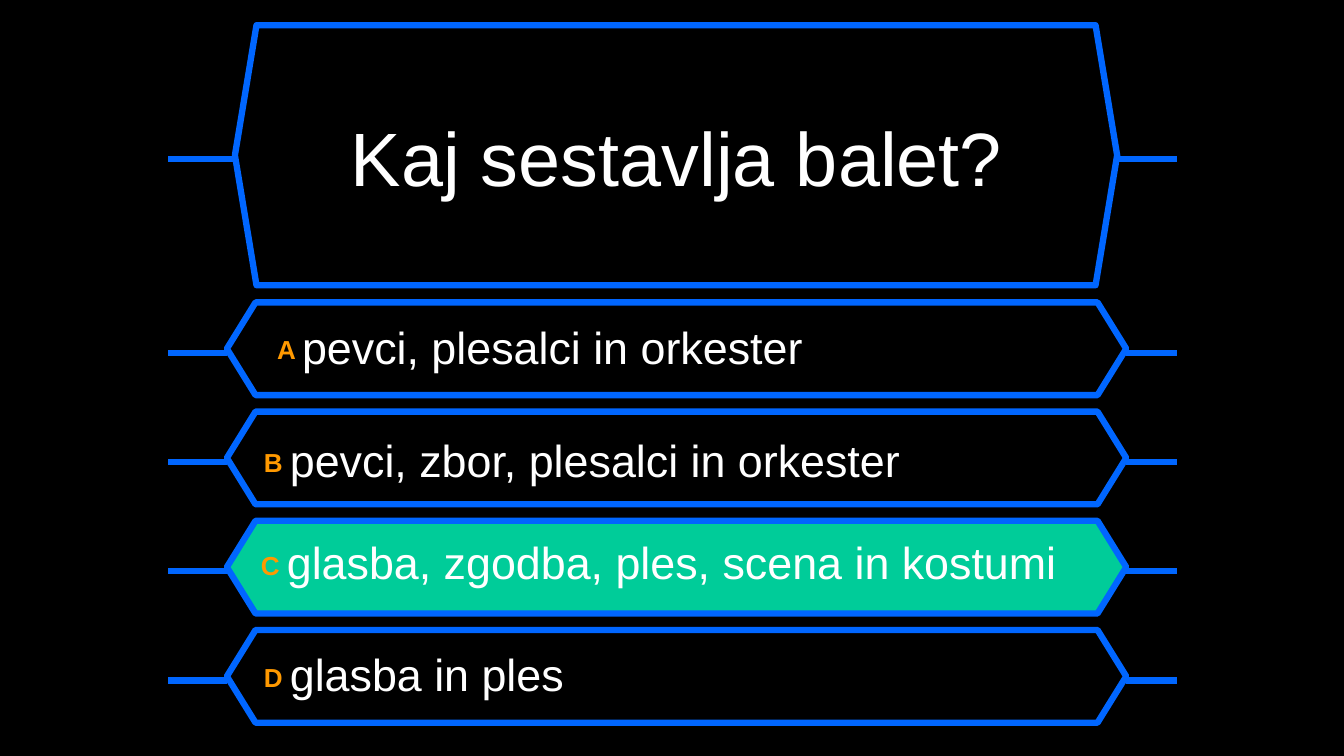
"""Build a quiz slide with one question and four answer bars."""
from dataclasses import dataclass

from lxml.etree import SubElement
from pptx import Presentation
from pptx.dml.color import RGBColor
from pptx.enum.shapes import MSO_CONNECTOR as Connector, MSO_SHAPE as Shape
from pptx.enum.text import MSO_ANCHOR as Anchor, PP_ALIGN as Align
from pptx.oxml.ns import qn
from pptx.slide import Slide
from pptx.text.text import TextFrame, _Paragraph as Paragraph
from pptx.util import Inches, Pt

BLACK = RGBColor(0x00, 0x00, 0x00)
WHITE = RGBColor(0xFF, 0xFF, 0xFF)
BLUE = RGBColor(0x00, 0x66, 0xFF)
GREEN = RGBColor(0x00, 0xCC, 0x99)
ORANGE = RGBColor(0xFF, 0x99, 0x00)
FONT = "Arial"
LINE_WIDTH = Pt(4.5)
WIRE_LEFT, WIRE_RIGHT = 1.67, 11.67
WIRE_DROP = 0.04
ANSWER_TOP, ANSWER_PITCH = 3.0, 13 / 12


@dataclass(frozen=True)
class Box:
    left: float
    top: float
    width: float
    height: float


@dataclass(frozen=True)
class Answer:
    letter: str
    text: str
    text_box: Box
    fill: RGBColor = BLACK


ANSWERS = [
    Answer("A", "pevci, plesalci in orkester", Box(2.65, 3.12, 7.95, 0.67)),
    Answer("B", "pevci, zbor, plesalci in orkester", Box(2.52, 4.24, 6.6, 0.64)),
    Answer("C", "glasba, zgodba, ples, scena in kostumi", Box(2.49, 5.26, 8.28, 0.64), GREEN),
    Answer("D", "glasba in ples", Box(2.52, 6.37, 3.24, 0.64)),
]


def add_wire(slide: Slide, start: float, end: float, y: float) -> None:
    """Draw a horizontal line beside a panel."""
    wire = slide.shapes.add_connector(
        Connector.STRAIGHT, Inches(start), Inches(y), Inches(end), Inches(y))
    wire.line.color.rgb = BLUE
    wire.line.width = LINE_WIDTH
    SubElement(wire._element.spPr, qn("a:effectLst"))


def add_panel(slide: Slide, box: Box, point: float, fill: RGBColor) -> None:
    """Draw a hexagon with a wire on each side."""
    panel = slide.shapes.add_shape(
        Shape.HEXAGON, Inches(box.left), Inches(box.top), Inches(box.width), Inches(box.height))
    panel.adjustments[0] = point
    panel.shadow.inherit = False
    panel.fill.solid()
    panel.fill.fore_color.rgb = fill
    panel.line.color.rgb = BLUE
    panel.line.width = LINE_WIDTH
    middle = box.top + box.height / 2 + WIRE_DROP
    add_wire(slide, box.left, WIRE_LEFT, middle)
    add_wire(slide, WIRE_RIGHT, box.left + box.width, middle)


def add_text_frame(slide: Slide, box: Box) -> TextFrame:
    """Add a wrapping text box and return its frame."""
    shape = slide.shapes.add_textbox(
        Inches(box.left), Inches(box.top), Inches(box.width), Inches(box.height))
    shape.text_frame.word_wrap = True
    return shape.text_frame


def add_run(paragraph: Paragraph, text: str, size: int, color: RGBColor,
            raised: bool = False) -> None:
    """Add one run, bold and raised for an answer letter."""
    run = paragraph.add_run()
    run.text = text
    run.font.name = FONT
    run.font.size = Pt(size)
    run.font.color.rgb = color
    run.font.bold = raised
    if raised:
        run._r.get_or_add_rPr().set("baseline", "10000")


def add_question(slide: Slide, text: str) -> None:
    """Draw the question panel and its centred text."""
    add_panel(slide, Box(2.33, 0.25, 8.75, 2.58), 0.083, BLACK)
    frame = add_text_frame(slide, Box(2.5, 0.42, 8.42, 2.25))
    frame.vertical_anchor = Anchor.MIDDLE
    paragraph = frame.paragraphs[0]
    paragraph.alignment = Align.CENTER
    add_run(paragraph, text, 54, WHITE)


def add_answer(slide: Slide, answer: Answer, row: int) -> None:
    """Draw one answer panel with its letter and text."""
    top = ANSWER_TOP + row * ANSWER_PITCH
    add_panel(slide, Box(2.25, top, 8.92, 0.92), 0.309, answer.fill)
    paragraph = add_text_frame(slide, answer.text_box).paragraphs[0]
    add_run(paragraph, f"{answer.letter} ", 32, ORANGE, raised=True)
    add_run(paragraph, answer.text, 32, WHITE)


def main() -> None:
    """Create and save the presentation."""
    presentation = Presentation()
    presentation.slide_width = Inches(13.33)
    presentation.slide_height = Inches(7.5)
    slide = presentation.slides.add_slide(presentation.slide_layouts[6])
    slide.background.fill.solid()
    slide.background.fill.fore_color.rgb = BLACK
    add_question(slide, "Kaj sestavlja balet?")
    for row, answer in enumerate(ANSWERS):
        add_answer(slide, answer, row)
    presentation.save("out.pptx")


if __name__ == "__main__":
    main()
